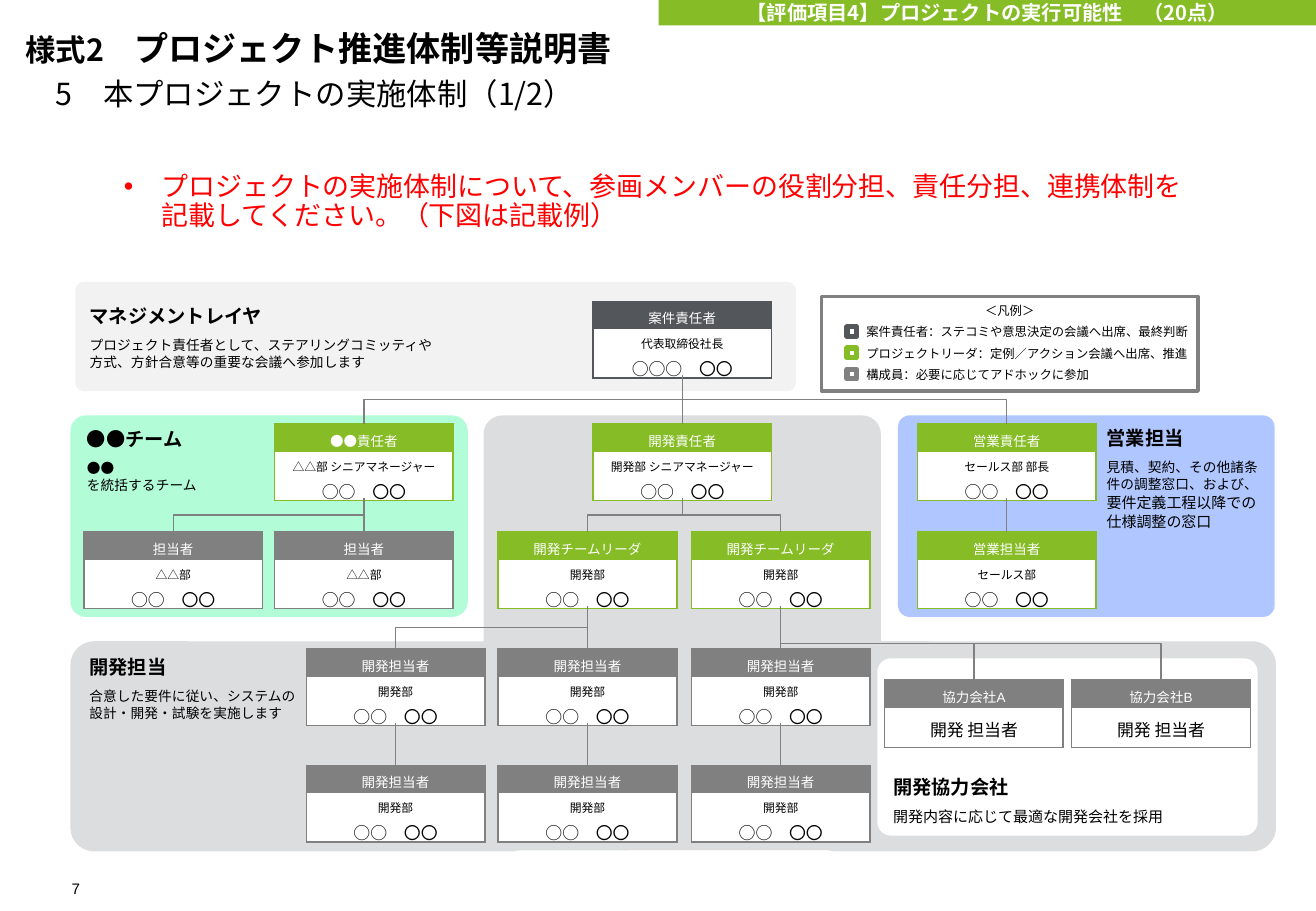
import pptx
import pptx.util
import pptx.dml.color
import pptx.enum.shapes
import pptx.enum.text
import pptx.oxml.ns
import lxml.etree

Inches, Pt = pptx.util.Inches, pptx.util.Pt
ALIGN = pptx.enum.text.PP_ALIGN
ANCHOR = pptx.enum.text.MSO_ANCHOR
SHAPE = pptx.enum.shapes.MSO_SHAPE
CONNECTOR = pptx.enum.shapes.MSO_CONNECTOR
qn = pptx.oxml.ns.qn

COLORS = {
    "black": "000000", "white": "FFFFFF", "red": "FF0000",
    "executive": "53565A", "leader": "86BC25", "member": "808080",
    "management": "F2F2F2", "team": "B2FCD8", "development": "DCDDDF", "sales": "AFC7FE",
}
NOTO, ARIAL = "Noto Sans CJK JP", "Arial"
CARD_W, HEADER_H, PERSON_H, PARTNER_H = 1.47, 0.22, 0.38, 0.33
MEMBER_NAME = "○○　〇〇"


def rgb(name):
    return pptx.dml.color.RGBColor.from_string(COLORS[name])


def add_run(paragraph, text, size, color="black", bold=False, font=NOTO):
    for number, line in enumerate(text.split("\n")):
        if number:
            paragraph.add_line_break()
        run = paragraph.add_run()
        run.text = line
        run.font.size, run.font.bold, run.font.name = Pt(size), bold, font
        run.font.color.rgb = rgb(color)
        east_asian = lxml.etree.Element(qn("a:ea"), typeface=NOTO)
        run.font._element.find(qn("a:latin")).addnext(east_asian)


def write(frame, paragraphs, align=ALIGN.LEFT, spacing=None, after=None, indent=0):
    """Each paragraph is a list of runs; each run is the arguments of add_run."""
    for number, runs in enumerate(paragraphs):
        paragraph = frame.add_paragraph() if number else frame.paragraphs[0]
        paragraph.alignment = align
        if spacing:
            paragraph.line_spacing = spacing
        if after is not None:
            paragraph.space_after = Pt(after)
        if indent:
            paragraph._p.get_or_add_pPr().set("marL", str(Inches(indent)))
        for run in runs:
            add_run(paragraph, *run)


def set_insets(target, left, top, right, bottom):
    target.margin_left, target.margin_top = Inches(left), Inches(top)
    target.margin_right, target.margin_bottom = Inches(right), Inches(bottom)


def add_text(slide, box, paragraphs, align=ALIGN.LEFT, anchor=ANCHOR.BOTTOM, wrap=True):
    frame = slide.shapes.add_textbox(*map(Inches, box)).text_frame
    frame.word_wrap, frame.vertical_anchor = wrap, anchor
    set_insets(frame, 0, 0, 0, 0)
    write(frame, paragraphs, align)
    return frame


def add_area(slide, box, fill, kind=SHAPE.RECTANGLE, radius=None, line=None, width=0):
    area = slide.shapes.add_shape(kind, *map(Inches, box))
    area.shadow.inherit = False
    area.fill.solid()
    area.fill.fore_color.rgb = rgb(fill)
    if radius:
        area.adjustments[0] = radius
    if line:
        area.line.color.rgb, area.line.width = rgb(line), Pt(width)
    else:
        area.line.fill.background()
    return area


def draw_heading(slide, box):
    left, top, width, height = box
    add_text(slide, (left, top + 0.36, width, height),
             [[("　5　本プロジェクトの実施体制（1/2）", 18)]])
    add_text(slide, box, [[("様式2　", 18, "black", True),
                           ("プロジェクト推進体制等説明書", 20.2, "black", True, ARIAL)]])


def draw_criterion(slide, box):
    frame = add_area(slide, box, "leader").text_frame
    frame.vertical_anchor = ANCHOR.MIDDLE
    set_insets(frame, 0.08, 0.08, 0.08, 0.08)
    write(frame, [[("【評価項目4】プロジェクトの実行可能性　（20点）", 12, "white", True)]],
          ALIGN.CENTER)


def draw_instruction(slide, box):
    frame = add_text(slide, box, [[(
        "プロジェクトの実施体制について、参画メンバーの役割分担、責任分担、連携体制を"
        "記載してください。（下図は記載例）", 16, "red")]], anchor=ANCHOR.TOP)
    frame.margin_left = Inches(0.08)
    frame.paragraphs[0].line_spacing = 0.89
    properties = frame.paragraphs[0]._p.get_or_add_pPr()
    properties.set("marL", str(Inches(0.31)))
    properties.set("indent", str(Inches(-0.31)))
    lxml.etree.SubElement(properties, qn("a:buFont"), typeface=ARIAL)
    lxml.etree.SubElement(properties, qn("a:buChar"), char="•")


def draw_panel(slide, box, fill, radius, title="", details=(), anchor=ANCHOR.TOP, indent=0):
    panel = add_area(slide, box, fill, SHAPE.ROUNDED_RECTANGLE, radius)
    if title:
        panel.text_frame.word_wrap = True
        panel.text_frame.vertical_anchor = anchor
        write(panel.text_frame, [[(title, 11.4, "black", True)], details],
              spacing=1.06, after=4.9, indent=indent)


def draw_card(slide, x, y, role, rank, lines, body_height):
    table = slide.shapes.add_table(2, 1, Inches(x), Inches(y), Inches(CARD_W),
                                   Inches(HEADER_H + body_height)).table
    table.first_row = table.horz_banding = False
    contents = [(HEADER_H, rank, [[(role, 8, "white", False, ARIAL)]]),
                (body_height, "white",
                 [[(text, size, "black", False, ARIAL)] for text, size in lines])]
    for row, (height, fill, paragraphs) in enumerate(contents):
        table.rows[row].height = Inches(height)
        cell = table.cell(row, 0)
        cell.fill.solid()
        cell.fill.fore_color.rgb = rgb(fill)
        cell.vertical_anchor = ANCHOR.MIDDLE
        set_insets(cell, 0.08, 0.04, 0.08, 0.04)
        write(cell.text_frame, paragraphs, ALIGN.CENTER, 1.1, 1)
        for position, side in enumerate(("a:lnL", "a:lnR", "a:lnT", "a:lnB")):
            border = lxml.etree.Element(qn(side), w=str(Pt(1)))
            solid = lxml.etree.SubElement(border, qn("a:solidFill"))
            lxml.etree.SubElement(solid, qn("a:srgbClr"), val=COLORS[rank])
            cell._tc.get_or_add_tcPr().insert(position, border)


def draw_link(slide, x1, y1, x2, y2):
    """Straight when the cards are stacked, otherwise down, across and down."""
    bent = abs(x2 - x1) > 0.02
    ends, kind = (x1, y1, x2, y2), CONNECTOR.STRAIGHT
    if bent:
        # An elbow runs sideways, so its box is laid down and then turned
        middle_x, middle_y = (x1 + x2) / 2, (y1 + y2) / 2
        half_run, half_drop = abs(x2 - x1) / 2, (y2 - y1) / 2
        ends = (middle_x - half_drop, middle_y - half_run,
                middle_x + half_drop, middle_y + half_run)
        kind = CONNECTOR.ELBOW
    link = slide.shapes.add_connector(kind, *map(Inches, ends))
    link.line.color.rgb, link.line.width = rgb("member"), Pt(0.75)
    properties = link._element.spPr
    lxml.etree.SubElement(properties, qn("a:effectLst"))
    if bent:
        turn = properties.find(qn("a:xfrm"))
        turn.set("rot", str((90 if x2 < x1 else 270) * 60000))
        if x2 > x1:
            turn.set("flipH", "1")


def draw_organisation(slide, left, top):
    # Panels
    panels = [
        ((6.1, 2.96, 3.82, 1.73), "development", 0.113),
        ((0.04, 0, 5.93, 0.9), "management", 0.077, "マネジメントレイヤ",
         [("プロジェクト責任者として、ステアリングコミッティや\n方式、方針合意等の重要な会議へ参加します", 8.1)],
         ANCHOR.MIDDLE),
        ((0, 1.1, 3.27, 1.66), "team", 0.077, "●●チーム", [("●●\nを統括するチーム", 8.1)]),
        ((3.4, 1.1, 3.27, 3.58), "development", 0.047),
        ((6.81, 1.1, 3.1, 1.66), "sales", 0.058, "営業担当",
         [("見積、契約、その他諸条件の調整窓口、および、", 8.1),
          ("要件定義工程以降での仕様調整の窓口", 8.9)], ANCHOR.TOP, 1.59),
        ((0, 2.96, 3.82, 1.73), "development", 0.113, "開発担当",
         [("合意した要件に従い、システムの\n設計・開発・試験を実施します", 8.1)]),
        ((6.64, 3.1, 3.13, 1.46), "white", 0.077, "開発協力会社",
         [("開発内容に応じて最適な開発会社を採用", 8.9)], ANCHOR.BOTTOM),
    ]
    for (x, y, width, height), *content in panels:
        draw_panel(slide, (left + x, top + y, width, height), *content)

    # Cards: column, row, role, rank, department
    cards = {
        "executive": (4.3, 0.16, "案件責任者", "executive", "代表取締役社長"),
        "team head": (1.68, 1.17, "●●責任者", "leader", "△△部 シニアマネージャー"),
        "team 1": (0.11, 2.06, "担当者", "member", "△△部"),
        "team 2": (1.68, 2.06, "担当者", "member", "△△部"),
        "dev head": (4.3, 1.17, "開発責任者", "leader", "開発部 シニアマネージャー"),
        "lead 1": (3.52, 2.06, "開発チームリーダ", "leader", "開発部"),
        "lead 2": (5.11, 2.06, "開発チームリーダ", "leader", "開発部"),
        "sales head": (6.97, 1.17, "営業責任者", "leader", "セールス部 部長"),
        "sales": (6.97, 2.06, "営業担当者", "leader", "セールス部"),
        "partner A": (6.7, 3.28, "協力会社A", "member", ""),
        "partner B": (8.24, 3.28, "協力会社B", "member", ""),
    }
    for column, x in enumerate((1.94, 3.52, 5.11)):
        for row, y in enumerate((3.02, 3.98)):
            cards[f"dev {column}{row}"] = (x, y, "開発担当者", "member", "開発部")
    for key, (x, y, role, rank, department) in cards.items():
        name = "○○○　〇〇" if key == "executive" else MEMBER_NAME
        lines = [(department, 7), (name, 10)] if department else [("開発 担当者", 10)]
        draw_card(slide, left + x, top + y, role, rank, lines,
                  PERSON_H if department else PARTNER_H)

    # Reporting lines
    reports = {
        "executive": ("team head", "dev head", "sales head"),
        "team head": ("team 1", "team 2"), "dev head": ("lead 1", "lead 2"),
        "sales head": ("sales",), "lead 1": ("dev 00", "dev 10"),
        "lead 2": ("dev 20", "partner A", "partner B"),
        "dev 00": ("dev 01",), "dev 10": ("dev 11",), "dev 20": ("dev 21",),
    }
    for head, members in reports.items():
        for member in members:
            (x1, y1), (x2, y2) = cards[head][:2], cards[member][:2]
            draw_link(slide, left + x1 + CARD_W / 2, top + y1 + HEADER_H + PERSON_H + 0.01,
                      left + x2 + CARD_W / 2, top + y2)


def draw_legend(slide, box):
    left, top = box[:2]
    frame = add_area(slide, box, "white", line="member", width=2).text_frame
    frame.vertical_anchor = ANCHOR.TOP
    write(frame, [[("＜凡例＞", 7.3)]], ALIGN.CENTER, 1.06, 4.9)
    entries = [("executive", "案件責任者：ステコミや意思決定の会議へ出席、最終判断"),
               ("leader", "プロジェクトリーダ：定例／アクション会議へ出席、推進"),
               ("member", "構成員：必要に応じてアドホックに参加")]
    for number, (rank, meaning) in enumerate(entries):
        marker = add_area(slide, (left + 0.21, top + 0.25 + number * 0.175, 0.08, 0.08),
                          "white", line=rank, width=3)
        marker.text_frame.word_wrap = False
        marker.text_frame.vertical_anchor = ANCHOR.MIDDLE
        write(marker.text_frame, [[(meaning, 7.3)]], spacing=1.06, after=4.9, indent=0.16)


def main():
    deck = pptx.Presentation()
    deck.slide_width, deck.slide_height = Inches(10.83), Inches(7.5)
    slide = deck.slides.add_slide(deck.slide_layouts[6])
    draw_heading(slide, (0.21, -0.15, 10.45, 0.71))
    draw_criterion(slide, (5.42, 0, 5.41, 0.21))
    draw_instruction(slide, (0.94, 1.43, 9, 0.7))
    draw_organisation(slide, 0.58, 2.32)
    draw_legend(slide, (6.76, 2.44, 3.1, 0.78))
    # Page number
    add_text(slide, (0.46, 7.2, 0.2, 0.19), [[("7", 9, "black", False, ARIAL)]],
             ALIGN.RIGHT, wrap=False)
    deck.save("out.pptx")


if __name__ == "__main__":
    main()
